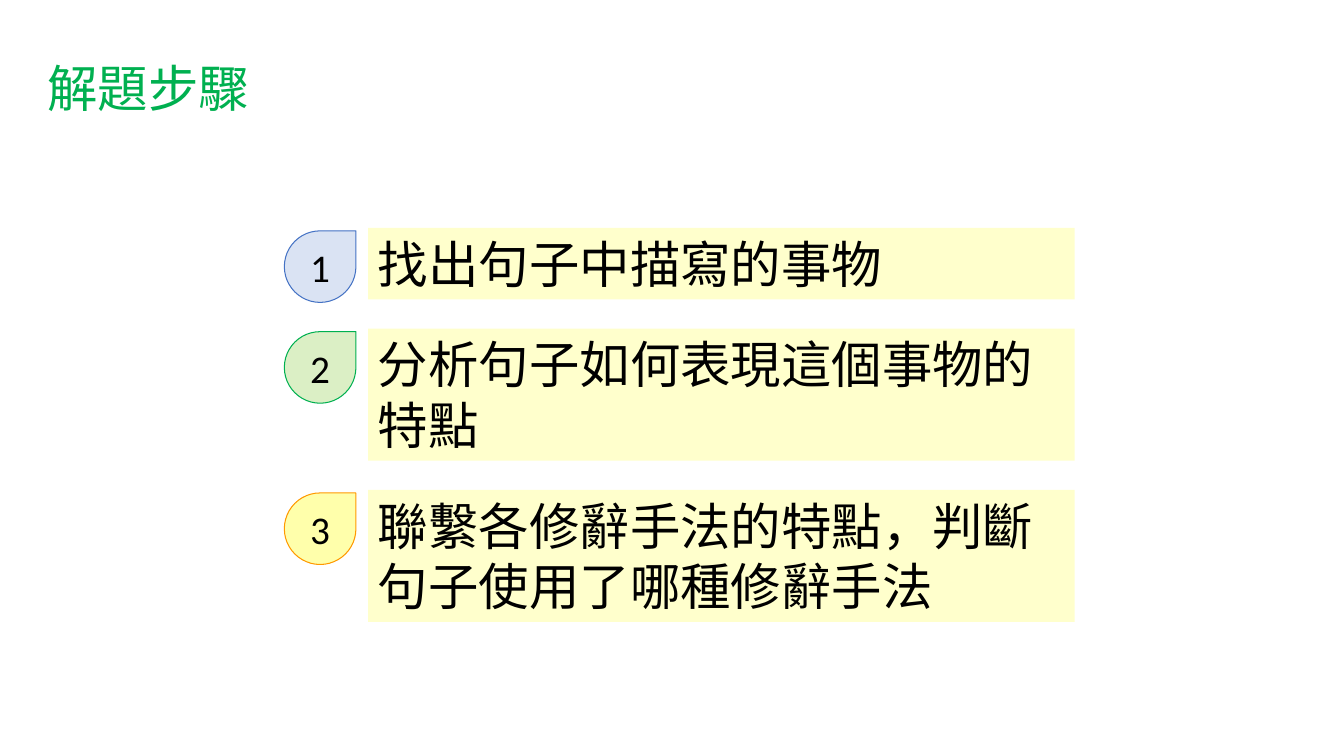
from lxml.etree import SubElement
from pptx import Presentation
from pptx.dml.color import RGBColor
from pptx.enum.shapes import MSO_SHAPE
from pptx.enum.text import MSO_ANCHOR, MSO_AUTO_SIZE, PP_ALIGN
from pptx.oxml.ns import qn
from pptx.util import Inches, Pt

TITLE = "解題步驟"
# Step text, number of lines, badge fill, badge outline
STEPS = [
    ("找出句子中描寫的事物", 1, "blue", "blue_line"),
    ("分析句子如何表現這個事物的特點", 2, "green", "green_line"),
    ("聯繫各修辭手法的特點，判斷句子使用了哪種修辭手法", 2, "yellow", "orange_line"),
]
COLORS = {
    "text": "000000", "title": "00B050", "panel": "FFFFCC",
    "blue": "8FAADC", "blue_line": "4472C4",
    "green": "92D050", "green_line": "00B050",
    "yellow": "FFFF00", "orange_line": "FF9900",
}
CJK_FONT = "Noto Sans CJK SC"

PANEL_LEFT, PANEL_WIDTH, FIRST_TOP = 3.65, 7.01, 2.26
LINE_HEIGHT, PANEL_PADDING, STEP_GAP = 0.6, 0.11, 0.29
BADGE_LEFT, BADGE_SIZE, BADGE_DROP = 2.82, 0.71, 0.03
BADGE_OPACITY = 33


def color(name):
    return RGBColor.from_string(COLORS[name])


def write_text(shape, text, *, size, font, fill="text", align=PP_ALIGN.LEFT,
               anchor=MSO_ANCHOR.TOP, wrap=True, auto_size=MSO_AUTO_SIZE.NONE):
    frame = shape.text_frame
    frame.word_wrap = wrap
    frame.auto_size = auto_size
    frame.vertical_anchor = anchor
    paragraph = frame.paragraphs[0]
    paragraph.alignment = align
    run = paragraph.add_run()
    run.text = text
    run.font.size = Pt(size)
    run.font.name = font
    run.font.color.rgb = color(fill)
    # East Asian typeface follows the Latin one
    latin = run.font._element.find(qn("a:latin"))
    east_asian = latin.makeelement(qn("a:ea"), {"typeface": CJK_FONT})
    latin.addnext(east_asian)


def add_filled_shape(slide, kind, left, top, width, height, fill, line=None, opacity=None):
    shape = slide.shapes.add_shape(kind, Inches(left), Inches(top), Inches(width), Inches(height))
    shape.shadow.inherit = False
    shape.fill.solid()
    shape.fill.fore_color.rgb = color(fill)
    if opacity:
        fill_color = shape._element.spPr.find(qn("a:solidFill"))[0]
        SubElement(fill_color, qn("a:alpha"), val=str(opacity * 1000))
    if line:
        shape.line.color.rgb = color(line)
        shape.line.width = Pt(0.75)
    else:
        shape.line.fill.background()
    return shape


def main():
    presentation = Presentation()
    presentation.slide_width = Inches(13.33)
    presentation.slide_height = Inches(7.5)
    slide = presentation.slides.add_slide(presentation.slide_layouts[5])

    # Title
    title = slide.shapes.title
    title.left, title.top = Inches(0.37), Inches(0.52)
    title.width, title.height = Inches(2.22), Inches(0.71)
    write_text(title, TITLE, size=36, font=CJK_FONT, fill="title", wrap=False,
               auto_size=MSO_AUTO_SIZE.SHAPE_TO_FIT_TEXT)

    # Steps: a text panel with a numbered badge beside its first line
    top = FIRST_TOP
    for number, (text, lines, badge_fill, badge_line) in enumerate(STEPS, 1):
        height = lines * LINE_HEIGHT + PANEL_PADDING
        panel = add_filled_shape(slide, MSO_SHAPE.RECTANGLE, PANEL_LEFT, top,
                                 PANEL_WIDTH, height, "panel")
        write_text(panel, text, size=36, font="Lato",
                   auto_size=MSO_AUTO_SIZE.SHAPE_TO_FIT_TEXT)
        badge = add_filled_shape(slide, MSO_SHAPE.TEAR, BADGE_LEFT, top + BADGE_DROP,
                                 BADGE_SIZE, BADGE_SIZE, badge_fill, badge_line, BADGE_OPACITY)
        write_text(badge, str(number), size=28, font="Calibri",
                   align=PP_ALIGN.CENTER, anchor=MSO_ANCHOR.MIDDLE)
        top += height + STEP_GAP

    presentation.save("out.pptx")


if __name__ == "__main__":
    main()
